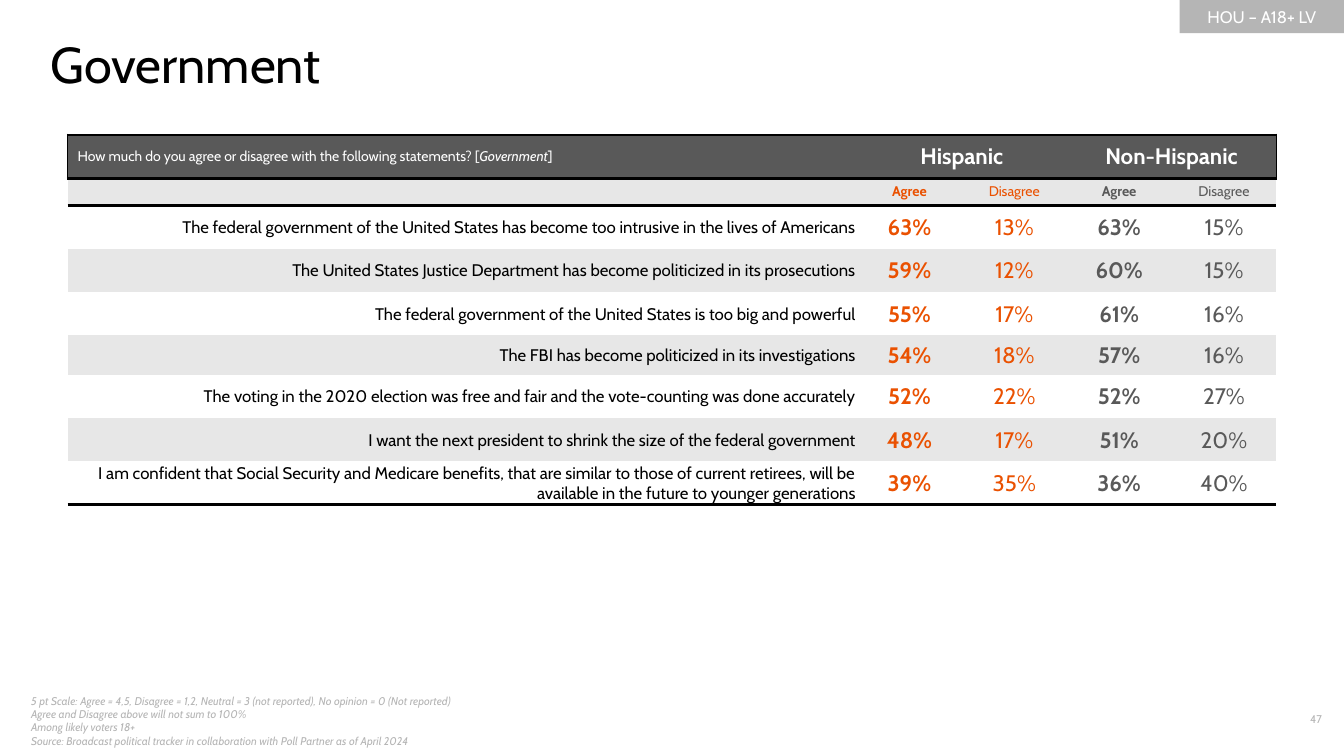
from lxml.etree import SubElement
from pptx import Presentation
from pptx.dml.color import RGBColor
from pptx.enum.shapes import MSO_SHAPE
from pptx.enum.text import MSO_ANCHOR, PP_ALIGN
from pptx.oxml import parse_xml
from pptx.oxml.ns import nsdecls, qn
from pptx.util import Inches, Pt

FONT = "Cabin"
COLORS = {
    "black": "000000", "white": "FFFFFF", "dark": "595959",
    "band": "E7E7E7", "muted": "B5B5B5", "orange": "EA5101",
}
NO_STYLE = "{2D5ABB26-0587-4C30-8999-92F81FD0307C}"

COLUMN_WIDTHS = [7.83, 1.04, 1.04, 1.04, 1.04]
ROW_HEIGHTS = [0.43, 0.25, 0.43, 0.43, 0.43, 0.39, 0.43, 0.43, 0.43]
QUESTION = "How much do you agree or disagree with the following statements? ["
GROUPS = ["Hispanic", "Non-Hispanic"]
ANSWERS = ["Agree", "Disagree"]
STATEMENTS = [
    ("The federal government of the United States has become too intrusive in the lives of Americans",
     63, 13, 63, 15),
    ("The United States Justice Department has become politicized in its prosecutions",
     59, 12, 60, 15),
    ("The federal government of the United States is too big and powerful",
     55, 17, 61, 16),
    ("The FBI has become politicized in its investigations",
     54, 18, 57, 16),
    ("The voting in the 2020 election was free and fair and the vote-counting was done accurately",
     52, 22, 52, 27),
    ("I want the next president to shrink the size of the federal government",
     48, 17, 51, 20),
    ("I am confident that Social Security and Medicare benefits, that are similar to those of "
     "current retirees, will be available in the future to younger generations",
     39, 35, 36, 40),
]
NOTES = [
    "5 pt Scale: Agree = 4,5, Disagree = 1,2, Neutral = 3 (not reported), No opinion = 0 (Not reported)",
    "Agree and Disagree above will not sum to 100%",
    "Among likely voters 18+\v"
    "Source: Broadcast political tracker in collaboration with Poll Partner as of April 2024",
]


def rgb(name):
    return RGBColor.from_string(COLORS[name])


def write(para, text, size=12, color="black", bold=False, italic=False, align=PP_ALIGN.LEFT):
    """Append text to a paragraph; a vertical tab makes a line break."""
    para.alignment = align
    for index, line in enumerate(text.split("\v")):
        if index:
            para.add_line_break()
        span = para.add_run()
        span.text = line
        font = span.font
        font.name, font.size = FONT, Pt(size)
        font.bold, font.italic = bold, italic
        font.color.rgb = rgb(color)


def set_borders(cell, **widths):
    """Draw black borders on the named sides: L, R, T, B."""
    properties = cell._tc.get_or_add_tcPr()
    sides = [side for side in "LRTB" if side in widths]
    for index, side in enumerate(sides):
        properties.insert(index, parse_xml(
            f'<a:ln{side} {nsdecls("a")} w="{Pt(widths[side])}"><a:solidFill>'
            f'<a:srgbClr val="{COLORS["black"]}"/></a:solidFill></a:ln{side}>'))


def add_title(page, left, top, width, height):
    title = page.shapes.title
    title.left, title.top = Inches(left), Inches(top)
    title.width, title.height = Inches(width), Inches(height)
    frame = title.text_frame
    frame.margin_left = frame.margin_right = frame.margin_top = frame.margin_bottom = 0
    frame.vertical_anchor = MSO_ANCHOR.TOP
    write(frame.paragraphs[0], "Government", size=36)


def add_audience_tag(page, left, top, width, height):
    tag = page.shapes.add_shape(MSO_SHAPE.RECTANGLE, Inches(left), Inches(top),
                                Inches(width), Inches(height))
    tag.shadow.inherit = False
    tag.fill.solid()
    tag.fill.fore_color.rgb = rgb("muted")
    tag.line.fill.background()
    tag.text_frame.vertical_anchor = MSO_ANCHOR.MIDDLE
    write(tag.text_frame.paragraphs[0], "HOU – A18+ LV", color="white", align=PP_ALIGN.CENTER)


def add_small_print(page, left, top, width, height, lines, anchor=MSO_ANCHOR.TOP, **style):
    box = page.shapes.add_textbox(Inches(left), Inches(top), Inches(width), Inches(height))
    frame = box.text_frame
    frame.word_wrap = True
    frame.vertical_anchor = anchor
    for index, line in enumerate(lines):
        para = frame.add_paragraph() if index else frame.paragraphs[0]
        write(para, line, size=8, color="muted", **style)


def fill_headers(table):
    """Write the question, the two groups and the answer labels."""
    question = table.cell(0, 0).text_frame.paragraphs[0]
    write(question, QUESTION, size=10, color="white")
    write(question, "Government", size=10, color="white", italic=True)
    write(question, "]", size=10, color="white")
    for index, group in enumerate(GROUPS):
        first = 1 + index * len(ANSWERS)
        table.cell(0, first).merge(table.cell(0, first + 1))
        write(table.cell(0, first).text_frame.paragraphs[0], group, size=16,
              color="white", bold=True, align=PP_ALIGN.CENTER)
    # A small end mark keeps the blank label cell from stretching its row
    blank = table.cell(1, 0).text_frame.paragraphs[0]
    SubElement(blank._p, qn("a:endParaRPr"), sz="1000")
    fill_answers(table, 1, ANSWERS * len(GROUPS), 10)


def fill_answers(table, row, texts, size):
    """Orange for the first group, grey for the second; Agree is bold."""
    for column, text in enumerate(texts, start=1):
        write(table.cell(row, column).text_frame.paragraphs[0], text, size=size,
              color="orange" if column <= 2 else "dark",
              bold=column % 2 == 1, align=PP_ALIGN.CENTER)


def add_opinion_table(page, left, top, width, height):
    table = page.shapes.add_table(len(ROW_HEIGHTS), len(COLUMN_WIDTHS), Inches(left),
                                  Inches(top), Inches(width), Inches(height)).table
    table.first_row = table.horz_banding = False
    table._tbl.tblPr.find(qn("a:tableStyleId")).text = NO_STYLE
    for column, size in zip(table.columns, COLUMN_WIDTHS):
        column.width = Inches(size)
    for row, size in zip(table.rows, ROW_HEIGHTS):
        row.height = Inches(size)

    # Fills, margins and rules
    last_row, last_column = len(ROW_HEIGHTS) - 1, len(COLUMN_WIDTHS) - 1
    for row_index, row in enumerate(table.rows):
        for column_index, cell in enumerate(row.cells):
            cell.vertical_anchor = MSO_ANCHOR.MIDDLE
            if row_index > 1:
                cell.margin_left = cell.margin_right = cell.margin_top = Inches(0.01)
                cell.margin_bottom = 0
            cell.fill.solid()
            shade = "dark" if row_index == 0 else "band" if row_index % 2 else "white"
            cell.fill.fore_color.rgb = rgb(shade)
            rules = {}
            if row_index == 0:
                rules = {"T": 2.25, "B": 2.25}
                if column_index == 0:
                    rules["L"] = 1
                if column_index >= last_column - 1:
                    rules["R"] = 1
            elif row_index == 1:
                rules = {"T": 2.25}
            elif row_index == last_row:
                rules = {"B": 2.25}
            set_borders(cell, **rules)

    fill_headers(table)
    for row_index, (statement, *shares) in enumerate(STATEMENTS, start=2):
        write(table.cell(row_index, 0).text_frame.paragraphs[0], statement, align=PP_ALIGN.RIGHT)
        fill_answers(table, row_index, [f"{share}%" for share in shares], 16)


def main():
    deck = Presentation()
    deck.slide_width, deck.slide_height = Inches(13.33), Inches(7.5)
    page = deck.slides.add_slide(deck.slide_layouts[5])
    add_small_print(page, 0.21, 6.95, 5.11, 0.4, NOTES, anchor=MSO_ANCHOR.MIDDLE, italic=True)
    add_small_print(page, 12.33, 7.02, 0.88, 0.27, ["47"], align=PP_ALIGN.RIGHT)
    add_audience_tag(page, 11.7, 0, 1.63, 0.33)
    add_title(page, 0.5, 0.33, 12, 0.61)
    add_opinion_table(page, 0.67, 1.34, 12, 3.68)
    deck.save("out.pptx")


if __name__ == "__main__":
    main()
